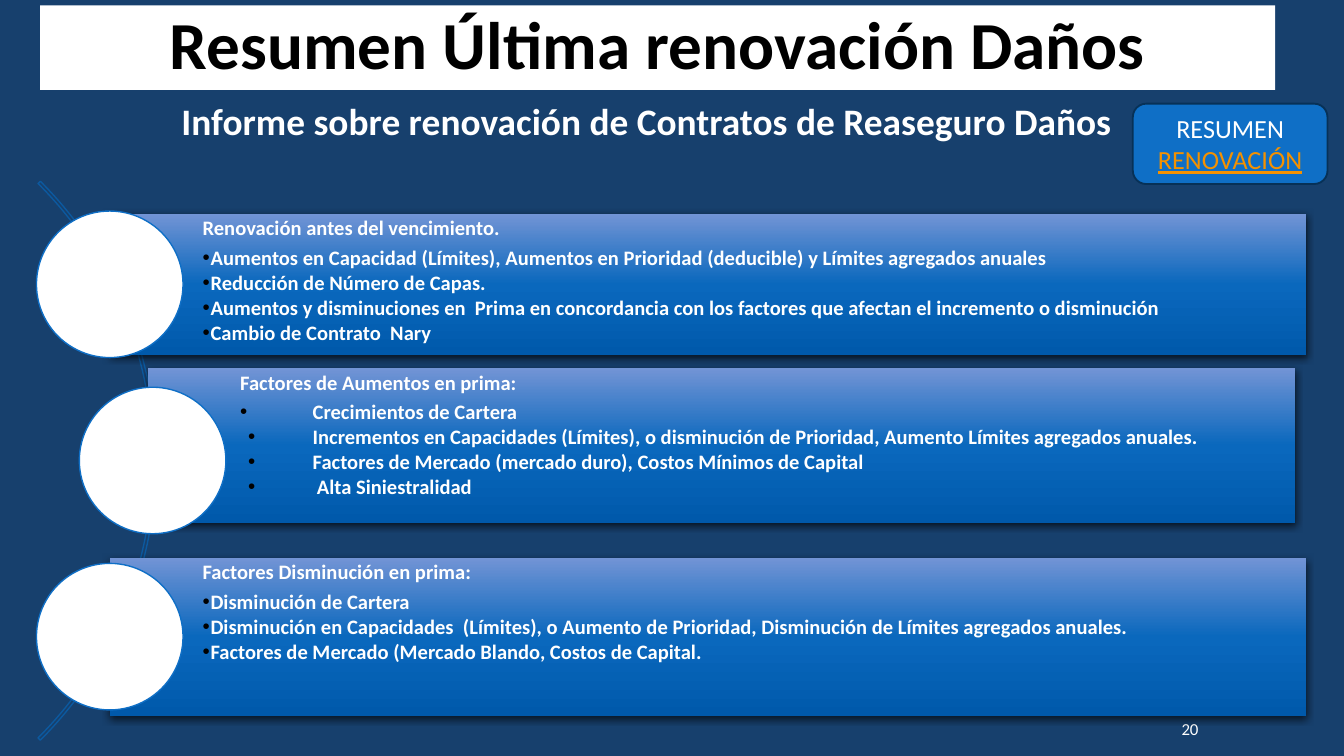
"""Build the slide that sums up the last damage treaty renewal."""
from copy import deepcopy
from pptx import Presentation
from pptx.dml.color import RGBColor
from pptx.enum.shapes import MSO_SHAPE as Kind
from pptx.enum.text import MSO_ANCHOR as Anchor, PP_ALIGN as Align
from pptx.oxml import parse_xml
from pptx.oxml.ns import nsdecls, qn
from pptx.util import Cm, Pt

SHADE = [(0, "7294D5"), (0.5, "0A68BD"), (1, "0059AB")]
SHADOW = (
    '<a:effectLst %s><a:outerShdw blurRad="50800" dist="15240" dir="5400000" '
    'algn="t" rotWithShape="0"><a:srgbClr val="000000"><a:alpha val="68000"/>'
    "</a:srgbClr></a:outerShdw></a:effectLst>"
)
HEAD = {"line_spacing": 0.9, "space_after": Pt(4), "alignment": Align.LEFT}
ITEM = {"line_spacing": 0.9, "space_after": Pt(1.5), "alignment": Align.LEFT}
MAIN = {"line_spacing": 0.9, "space_before": Pt(7.5), "alignment": Align.CENTER}
MID = {"alignment": Align.CENTER}
NEAR = (0.15, 0)

CARDS = [
    (0.69, (2.08, 4.04, 22.61, 2.67), "Renovación antes del vencimiento.", [
        ("Aumentos en Capacidad (Límites), Aumentos en Prioridad (deducible) y Límites agregados anuales", NEAR),
        ("Reducción de Número de Capas.", NEAR),
        ("Aumentos y disminuciones en  Prima en concordancia con los factores que afectan el incremento o disminución", NEAR),
        ("Cambio de Contrato  Nary", NEAR),
    ]),
    (1.5, (2.79, 6.96, 21.69, 2.92), "Factores de Aumentos en prima:", [
        ("Crecimientos de Cartera", (1.37, 0)),
        ("Incrementos en Capacidades (Límites), o disminución de Prioridad, Aumento Límites agregados anuales.", (1.37, 0.15)),
        ("Factores de Mercado (mercado duro), Costos Mínimos de Capital", (1.37, 0.15)),
        ("Alta Siniestralidad", (1.45, 0.15)),
    ]),
    (0.69, (2.08, 10.54, 22.61, 3), "Factores Disminución en prima:", [
        ("Disminución de Cartera", NEAR),
        ("Disminución en Capacidades  (Límites), o Aumento de Prioridad, Disminución de Límites agregados anuales.", NEAR),
        ("Factores de Mercado (Mercado Blando, Costos de Capital.", NEAR),
    ]),
]


def tint(code):
    return RGBColor.from_string(code)


def style(thing, form):
    for name, value in form.items():
        setattr(thing, name, value)


class Page:
    def __init__(self, slide, font, ink):
        self.slide, self.font, self.ink = slide, font, ink

    def frame(self, shape, pad, anchor):
        names = ("margin_left", "margin_top", "margin_right", "margin_bottom")
        form = dict(zip(names, map(Cm, pad)), word_wrap=True, vertical_anchor=anchor)
        style(shape.text_frame, form)
        return shape.text_frame.paragraphs[0]

    def words(self, par, text, size, form, ink=None, **font):
        style(par, form)
        run = par.add_run()
        run.text = text
        style(run.font, {"name": self.font, "size": Pt(size), **font})
        run.font.color.rgb = tint(ink or self.ink)

    def shape(self, kind, box, fill=None, line=None, width=0.75):
        shape = self.slide.shapes.add_shape(kind, *map(Cm, box))
        shape.shadow.inherit = False
        if fill:
            shape.fill.solid()
            shape.fill.fore_color.rgb = tint(fill)
        else:
            shape.fill.background()
        if line:
            shape.line.color.rgb = tint(line)
            shape.line.width = Pt(width)
        else:
            shape.line.fill.background()
        return shape

    def title(self, text, box):
        shape = self.slide.shapes.title
        style(shape, dict(zip(("left", "top", "width", "height"), map(Cm, box))))
        shape.fill.solid()
        shape.fill.fore_color.rgb = tint("FFFFFF")
        par = self.frame(shape, (0.18, 0.1, 0.18, 0.1), Anchor.MIDDLE)
        self.words(par, text, 36, MAIN, "000000", bold=True)

    def label(self, text, box, pad, size, form, **font):
        shape = self.slide.shapes.add_textbox(*map(Cm, box))
        self.words(self.frame(shape, pad, Anchor.MIDDLE), text, size, form, **font)

    def arc(self, box, turns):
        shape = self.shape(Kind.BLOCK_ARC, box, line="0C599F")
        for spot, turn in enumerate(turns):
            shape.adjustments[spot] = turn

    def bar(self, box):
        shape = self.shape(Kind.RECTANGLE, box)
        shape.fill.gradient()
        shape.fill.gradient_angle = 270
        props = shape._element.spPr
        stops = props.find(".//" + qn("a:gsLst"))
        stops.append(deepcopy(stops[0]))
        for stop, (place, code) in zip(shape.fill.gradient_stops, SHADE):
            stop.position = place
            stop.color.rgb = tint(code)
        props.replace(props.find(qn("a:effectLst")), parse_xml(SHADOW % nsdecls("a")))
        return shape

    def point(self, par, text, left, start):
        self.words(par, text, 11, ITEM, bold=True)
        props = par._p.get_or_add_pPr()
        props.set("marL", str(Cm(left)))
        props.set("indent", str(Cm(start - left)))
        for mark in ('<a:buClr %s><a:srgbClr val="000000"/></a:buClr>',
                     '<a:buFont %s typeface="Arial"/>', '<a:buChar %s char="•"/>'):
            props.append(parse_xml(mark % nsdecls("a")))

    def card(self, disc, box, head, items):
        shape = self.bar(box)
        par = self.frame(shape, (1.75, 0.08, 0.08, 0.08), Anchor.TOP)
        self.words(par, head, 11, HEAD, bold=True)
        for text, (left, start) in items:
            self.point(shape.text_frame.add_paragraph(), text, left, start)
        self.shape(Kind.OVAL, disc, "FFFFFF", "0F6FC6")

    def button(self, box, first, link):
        shape = self.shape(Kind.ROUNDED_RECTANGLE, box, "0F6FC6", "073157", 1)
        par = self.frame(shape, (0.25, 0.13, 0.25, 0.13), Anchor.MIDDLE)
        self.words(par, first, 14, MID)
        self.words(par, link, 14, MID, "F49100", underline=True)


def main():
    deck = Presentation()
    deck.slide_width, deck.slide_height = Cm(25.4), Cm(14.29)
    slide = deck.slides.add_slide(deck.slide_layouts[5])
    slide.background.fill.solid()
    slide.background.fill.fore_color.rgb = tint("17406D")
    page = Page(slide, "Calibri", "FFFFFF")
    page.title("Resumen Última renovación Daños", (0.76, 0.1, 23.34, 1.6))
    page.label("20", (22.2, 13.39, 1.98, 0.76), (0.13, 0.13, 0.25, 0.13), 9, {})
    page.label("Informe sobre renovación de Contratos de Reaseguro Daños",
               (2.35, 1.42, 19.74, 1.83), (0.15, 0.08, 0.15, 0.08), 20, MAIN, bold=True)
    page.arc((-11.99, 1.24, 14.94, 14.94), (189, 27, 0.004))
    for row, (left, box, head, items) in enumerate(CARDS):
        page.card((left, 3.99 + 3.33 * row, 2.77, 2.77), box, head, items)
    page.button((21.41, 1.96, 3.68, 1.52), "RESUMEN ", "RENOVACIÓN")
    deck.save("out.pptx")


if __name__ == "__main__":
    main()
